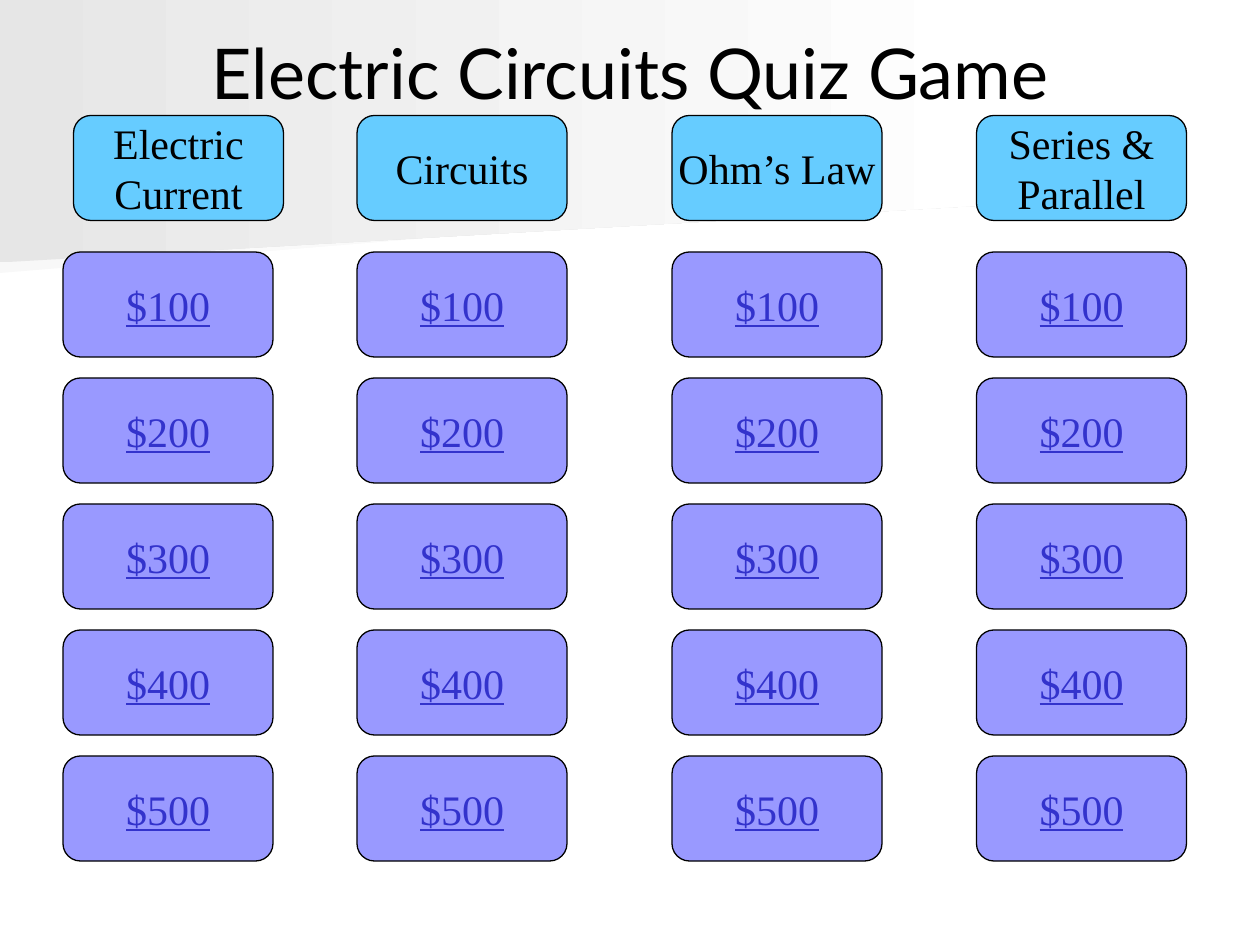
import pptx
import pptx.dml.color
import pptx.enum.shapes
import pptx.enum.text
import pptx.util

Pt = pptx.util.Pt
RGB = pptx.dml.color.RGBColor
MIDDLE = pptx.enum.text.MSO_ANCHOR.MIDDLE
CENTER = pptx.enum.text.PP_ALIGN.CENTER
CARD = pptx.enum.shapes.MSO_SHAPE.FLOWCHART_ALTERNATE_PROCESS

BLACK = RGB(0x00, 0x00, 0x00)
WHITE = RGB(0xFF, 0xFF, 0xFF)
PALE = RGB(0xF8, 0xF8, 0xF8)
GREY = RGB(0xE6, 0xE6, 0xE6)
SKY = RGB(0x66, 0xCC, 0xFF)
LILAC = RGB(0x99, 0x99, 0xFF)
BLUE = RGB(0x33, 0x33, 0xCC)

# Topic, left of its heading, left of its prizes
TOPICS = [
    ("Electric\nCurrent", 42, 36),
    ("Circuits", 204, 204),
    ("Ohm’s Law", 384, 384),
    ("Series &\nParallel", 558, 558),
]
PRIZES = [100, 200, 300, 400, 500]
HEAD_TOP, PRIZE_TOP, STEP = 66, 144, 72
WIDTH, HEIGHT = 120, 60


def add_band(slide, points, start):
    """Draw a backdrop area that fades from start to white, left to right."""
    form = slide.shapes.build_freeform(*points[0], scale=Pt(1))
    form.add_line_segments(points[1:], close=True)
    band = form.convert_to_shape()
    band.shadow.inherit = False
    band.line.fill.background()
    band.fill.gradient()
    band.fill.gradient_angle = 0
    for stop, color in zip(band.fill.gradient_stops, (start, WHITE)):
        stop.color.rgb = color


def style_text(frame, name, size, color, underline=None):
    frame.vertical_anchor = MIDDLE
    for line in frame.paragraphs:
        line.alignment = CENTER
        line.font.name = name
        line.font.size = Pt(size)
        line.font.color.rgb = color
        line.font.underline = underline


def set_title(slide, text):
    title = slide.shapes.title
    slide.shapes._spTree.append(title._element)  # in front of the bands
    title.left, title.top = Pt(36), Pt(21.6)
    title.width, title.height = Pt(648), Pt(38)
    title.text_frame.text = text
    title.text_frame.auto_size = pptx.enum.text.MSO_AUTO_SIZE.NONE
    style_text(title.text_frame, "Lato", 40, BLACK)


def add_card(slide, text, left, top, fill, color, underline=None):
    card = slide.shapes.add_shape(CARD, Pt(left), Pt(top), Pt(WIDTH), Pt(HEIGHT))
    card.shadow.inherit = False
    card.fill.solid()
    card.fill.fore_color.rgb = fill
    card.line.color.rgb = BLACK
    card.line.width = Pt(0.75)
    card.text_frame.text = text
    card.text_frame.word_wrap = False
    style_text(card.text_frame, "Times New Roman", 24, color, underline)


def main():
    deck = pptx.Presentation()
    deck.slide_width, deck.slide_height = Pt(720), Pt(540)
    slide = deck.slides.add_slide(deck.slide_layouts.get_by_name("Title Only"))

    add_band(slide, [(560, 110), (0, 156), (0, 73), (561, 73)], PALE)
    add_band(slide, [(570, 117), (0, 150), (0, 0), (570, 0)], GREY)
    set_title(slide, "Electric Circuits Quiz Game")

    for topic, head_left, left in TOPICS:
        add_card(slide, topic, head_left, HEAD_TOP, SKY, BLACK)
        for row, prize in enumerate(PRIZES):
            top = PRIZE_TOP + row * STEP
            add_card(slide, f"${prize}", left, top, LILAC, BLUE, True)

    deck.save("out.pptx")


if __name__ == "__main__":
    main()
